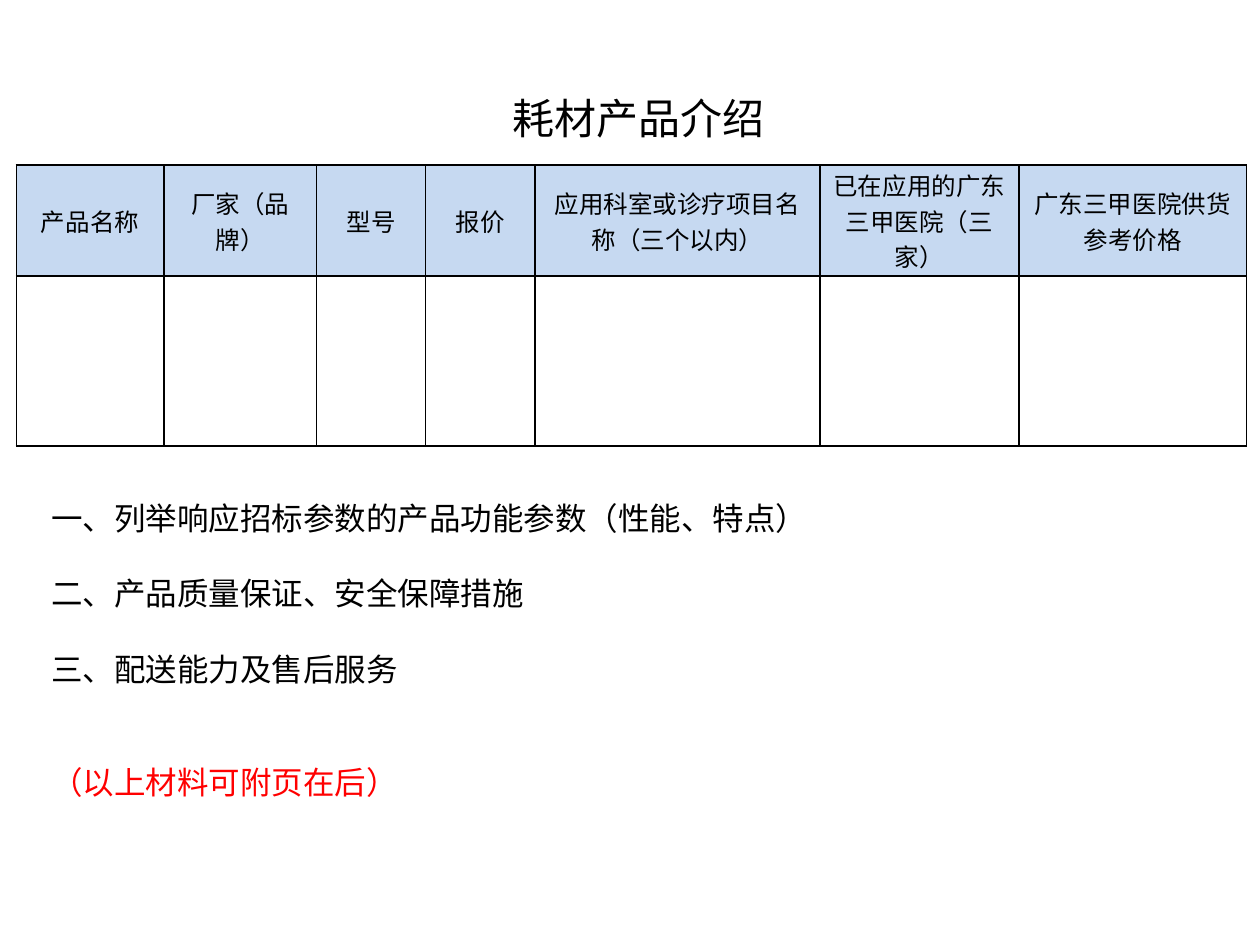
import dataclasses
import pptx
import pptx.dml.color
import pptx.enum.text
import pptx.oxml
import pptx.oxml.ns
import pptx.util

Pt = pptx.util.Pt
Align = pptx.enum.text.PP_ALIGN
Anchor = pptx.enum.text.MSO_ANCHOR
AutoSize = pptx.enum.text.MSO_AUTO_SIZE


@dataclasses.dataclass(frozen=True)
class Theme:
    ink: str = "000000"
    accent: str = "FF0000"
    header_fill: str = "C6D9F1"
    title_font: str = "Arial"
    body_font: str = "Calibri"
    table_font: str = "Noto Sans CJK SC"
    title_size: float = 24
    body_size: float = 18
    table_size: float = 14
    border_width: float = 1


def color(value):
    return pptx.dml.color.RGBColor.from_string(value)


def write_text(paragraph, text, *, font, size, ink, align=Align.LEFT, before=0, east_asian=None):
    paragraph.alignment = align
    paragraph.space_before = Pt(before)
    run = paragraph.add_run()
    run.text = text
    run.font.name = font
    run.font.size = Pt(size)
    run.font.bold = False
    run.font.color.rgb = color(ink)
    properties = run.font._element
    properties.set("lang", "zh-CN")
    if east_asian:
        latin = properties.find(pptx.oxml.ns.qn("a:latin"))
        latin.addnext(pptx.oxml.parse_xml(
            f'<a:ea {pptx.oxml.ns.nsdecls("a")} typeface="{east_asian}"/>'))


class SlideBuilder:
    def __init__(self, slide, theme):
        self.slide = slide
        self.theme = theme

    def title(self, text, left, top, width, height):
        shape = self.slide.shapes.title
        shape.left, shape.top, shape.width, shape.height = map(Pt, (left, top, width, height))
        frame = shape.text_frame
        frame.auto_size = AutoSize.NONE
        frame.vertical_anchor = Anchor.MIDDLE
        write_text(frame.paragraphs[0], text, font=self.theme.title_font,
                   size=self.theme.title_size, ink=self.theme.ink, align=Align.CENTER)

    def text_box(self, items, left, top, width, height):
        frame = self.slide.shapes.add_textbox(*map(Pt, (left, top, width, height))).text_frame
        frame.word_wrap = True
        for index, (text, ink, before) in enumerate(items):
            paragraph = frame.add_paragraph() if index else frame.paragraphs[0]
            write_text(paragraph, text, font=self.theme.body_font,
                       size=self.theme.body_size, ink=ink, before=before)

    def border(self, cell):
        properties = cell._tc.get_or_add_tcPr()
        for index, side in enumerate(("lnL", "lnR", "lnT", "lnB")):
            properties.insert(index, pptx.oxml.parse_xml(
                f'<a:{side} {pptx.oxml.ns.nsdecls("a")} w="{Pt(self.theme.border_width)}">'
                f'<a:solidFill><a:srgbClr val="{self.theme.ink}"/></a:solidFill></a:{side}>'))

    def table(self, headers, left, top, column_widths, row_heights):
        table = self.slide.shapes.add_table(
            len(row_heights), len(headers), Pt(left), Pt(top),
            Pt(sum(column_widths)), Pt(sum(row_heights))).table
        table.first_row = table.horz_banding = False
        for column, width in zip(table.columns, column_widths):
            column.width = Pt(width)
        for row, height in zip(table.rows, row_heights):
            row.height = Pt(height)
        for cell in table.iter_cells():
            cell.fill.background()
            cell.vertical_anchor = Anchor.MIDDLE
            cell.margin_left = cell.margin_right = Pt(5)
            cell.margin_top = cell.margin_bottom = 0
            self.border(cell)
        for cell, header in zip(table.rows[0].cells, headers):
            cell.fill.solid()
            cell.fill.fore_color.rgb = color(self.theme.header_fill)
            write_text(cell.text_frame.paragraphs[0], header, font=self.theme.table_font,
                       size=self.theme.table_size, ink=self.theme.ink, align=Align.CENTER,
                       east_asian=self.theme.table_font)


def main():
    presentation = pptx.Presentation()
    presentation.slide_width, presentation.slide_height = Pt(720), Pt(540)
    slide = presentation.slides.add_slide(presentation.slide_layouts[5])
    theme = Theme()
    builder = SlideBuilder(slide, theme)
    builder.title("耗材产品介绍", 88, 49, 554, 36)
    builder.table(
        ["产品名称", "厂家（品牌）", "型号", "报价", "应用科室或诊疗项目名称（三个以内）",
         "已在应用的广东三甲医院（三家）", "广东三甲医院供货参考价格"],
        left=9.3, top=94.4,
        column_widths=[84.4, 87.3, 62.2, 62.6, 162.8, 113.7, 130],
        row_heights=[63.2, 97.3])
    gap = 21.6
    builder.text_box([
        ("一、列举响应招标参数的产品功能参数（性能、特点）", theme.ink, 0),
        ("二、产品质量保证、安全保障措施", theme.ink, gap),
        ("三、配送能力及售后服务", theme.ink, gap),
        ("（以上材料可附页在后）", theme.accent, 2 * gap),
    ], 22.3, 281.5, 684, 181.5)
    presentation.save("out.pptx")


if __name__ == "__main__":
    main()
